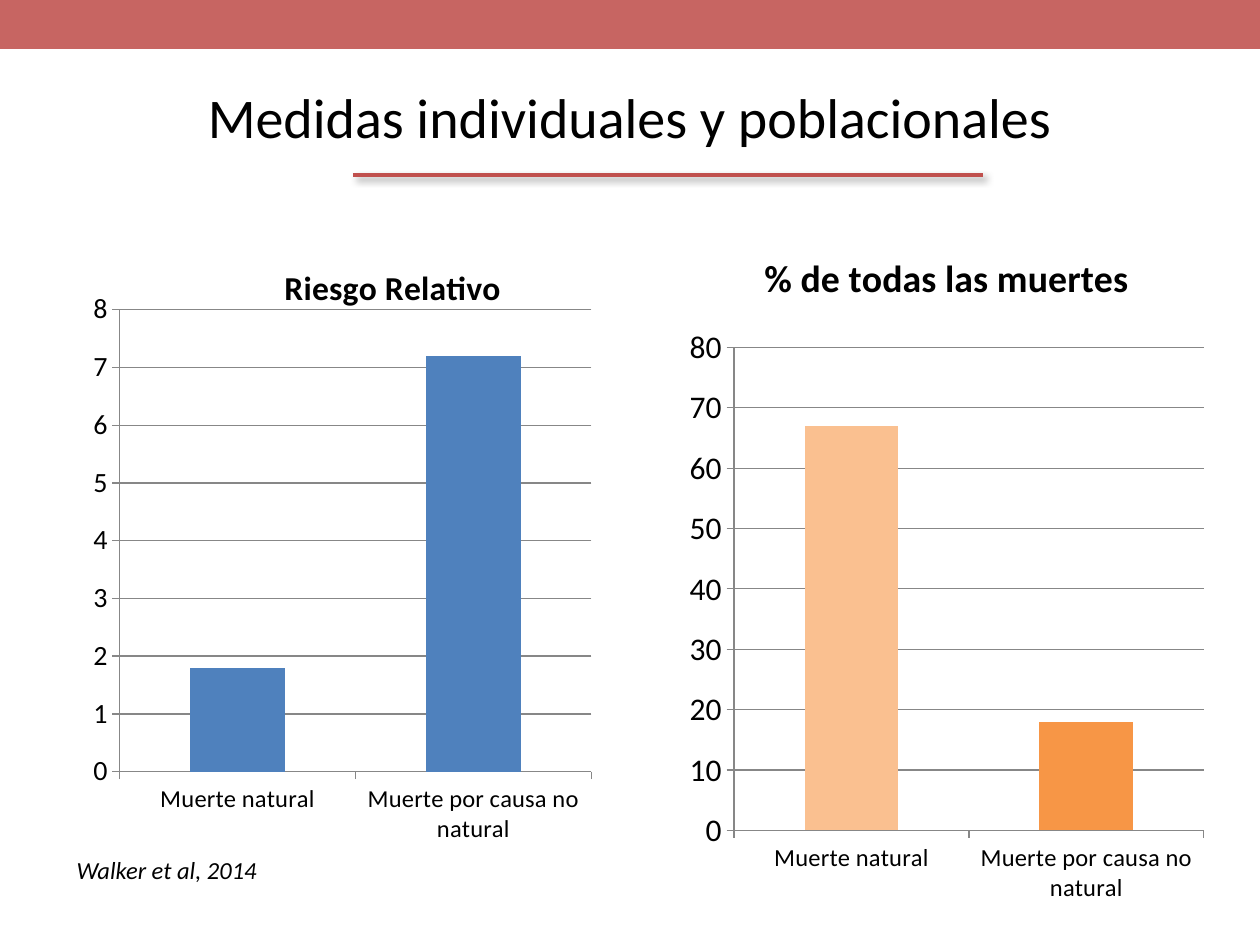
import pptx
import pptx.chart.data
import pptx.dml.color
import pptx.enum.chart
import pptx.enum.shapes
import pptx.enum.text
import pptx.oxml
import pptx.oxml.ns
import pptx.util

Pt = pptx.util.Pt
FONT = "Calibri"
BLACK, RED, GRID = "000000", "C0504D", "878787"
TITLE = "Medidas individuales y poblacionales"
SOURCE = "Walker et al, 2014"
CATEGORIES = ["Muerte natural", "Muerte por causa no natural"]
CHARTS = [
    {"title": "Riesgo Relativo", "values": [1.8, 7.2], "colors": ["4F81BD"] * 2,
     "box": (36, 126, 648, 356.4), "size": 16, "maximum": 8, "step": 1,
     "plot": {"x": 0.05, "y": 0.144, "w": 0.416, "h": 0.744},
     "title_place": {"x": 0.19, "y": 0.06}},
    {"title": "% de todas las muertes", "values": [67, 18], "colors": ["FAC090", "F79646"],
     "box": (388, 128, 306, 396), "size": 18, "maximum": 80, "step": 10},
]


def rgb(color):
    return pptx.dml.color.RGBColor.from_string(color)


def points(*lengths):
    return [Pt(length) for length in lengths]


def format_font(font, color=BLACK, **values):
    for name, value in {"name": FONT, **values}.items():
        setattr(font, name, value)
    font.color.rgb = rgb(color)


def place_in_chart(parent, index, place):
    """Give a chart part a manual layout, in fractions of the chart."""
    for old in parent.findall(pptx.oxml.ns.qn("c:layout")):
        parent.remove(old)
    target = '<c:layoutTarget val="inner"/>' if "w" in place else ""
    modes = "".join(f'<c:{key}Mode val="edge"/>' for key in "xy")
    values = "".join(f'<c:{key} val="{value}"/>' for key, value in place.items())
    parent.insert(index, pptx.oxml.parse_xml(
        f'<c:layout {pptx.oxml.ns.nsdecls("c")}><c:manualLayout>'
        f'{target}{modes}{values}</c:manualLayout></c:layout>'))


def add_column_chart(slide, content):
    data = pptx.chart.data.CategoryChartData()
    data.categories = CATEGORIES
    data.add_series(content["title"], content["values"])
    chart = slide.shapes.add_chart(
        pptx.enum.chart.XL_CHART_TYPE.COLUMN_CLUSTERED,
        *points(*content["box"]), data).chart
    chart.has_legend = False
    format_font(chart.font, size=Pt(content["size"]))

    chart.has_title = True
    title = chart.chart_title
    title.include_in_layout = False
    title.text_frame.text = content["title"]
    format_font(title.text_frame.paragraphs[0].runs[0].font,
                size=Pt(content["size"] * 1.2), bold=True)

    plot = chart.plots[0]
    plot.gap_width = 150
    plot.vary_by_categories = False
    for index, color in enumerate(content["colors"]):
        fill = plot.series[0].points[index].format.fill
        fill.solid()
        fill.fore_color.rgb = rgb(color)

    value_axis, category_axis = chart.value_axis, chart.category_axis
    scale = {"minimum_scale": 0, "maximum_scale": content["maximum"],
             "major_unit": content["step"], "has_major_gridlines": True}
    for name, value in scale.items():
        setattr(value_axis, name, value)
    format_font(category_axis.tick_labels.font, size=Pt(14))
    for part in (value_axis, category_axis, value_axis.major_gridlines):
        part.format.line.color.rgb = rgb(GRID)
        part.format.line.width = Pt(0.75)
    for axis in (value_axis, category_axis):
        axis.major_tick_mark = pptx.enum.chart.XL_TICK_MARK.OUTSIDE

    if "plot" in content:
        chart_element = chart.element.find(pptx.oxml.ns.qn("c:chart"))
        place_in_chart(chart_element.find(pptx.oxml.ns.qn("c:plotArea")), 0, content["plot"])
        place_in_chart(chart_element.find(pptx.oxml.ns.qn("c:title")), 1, content["title_place"])


def add_title(slide):
    title = slide.shapes.title
    title.left, title.top, title.width, title.height = points(36, 21.6, 648, 90)
    title.text_frame.text = TITLE
    title.text_frame.vertical_anchor = pptx.enum.text.MSO_ANCHOR.MIDDLE
    paragraph = title.text_frame.paragraphs[0]
    paragraph.alignment = pptx.enum.text.PP_ALIGN.CENTER
    format_font(paragraph.runs[0].font, size=Pt(32))


def add_source(slide):
    frame = slide.shapes.add_textbox(*points(36.7, 485.3, 255, 24.2)).text_frame
    frame.word_wrap = True
    frame.text = SOURCE
    format_font(frame.paragraphs[0].runs[0].font, size=Pt(14), italic=True)


def add_title_rule(slide):
    rule = slide.shapes.add_connector(
        pptx.enum.shapes.MSO_CONNECTOR.STRAIGHT, *points(201.6, 100, 561.6, 100))
    rule.line.color.rgb = rgb(RED)
    rule.line.width = Pt(2.25)
    rule._element.spPr.append(pptx.oxml.parse_xml(
        f'<a:effectLst {pptx.oxml.ns.nsdecls("a")}>'
        f'<a:outerShdw blurRad="{Pt(4)}" dist="{Pt(3)}" dir="2700000" rotWithShape="0">'
        f'<a:srgbClr val="{BLACK}"><a:alpha val="40000"/></a:srgbClr>'
        '</a:outerShdw></a:effectLst>'))


def add_top_band(slide):
    band = slide.shapes.add_shape(
        pptx.enum.shapes.MSO_SHAPE.RECTANGLE, *points(0, 0, 720, 28))
    band.shadow.inherit = False
    band.line.fill.background()
    band.fill.solid()
    band.fill.fore_color.rgb = rgb(RED)
    color = band._element.spPr.find(".//" + pptx.oxml.ns.qn("a:srgbClr"))
    color.append(pptx.oxml.parse_xml(
        f'<a:alpha {pptx.oxml.ns.nsdecls("a")} val="88000"/>'))


def main():
    presentation = pptx.Presentation()
    presentation.slide_width, presentation.slide_height = points(720, 540)
    slide = presentation.slides.add_slide(presentation.slide_layouts[5])
    add_title(slide)
    for content in CHARTS:
        add_column_chart(slide, content)
    add_source(slide)
    add_title_rule(slide)
    add_top_band(slide)
    presentation.save("out.pptx")


if __name__ == "__main__":
    main()
